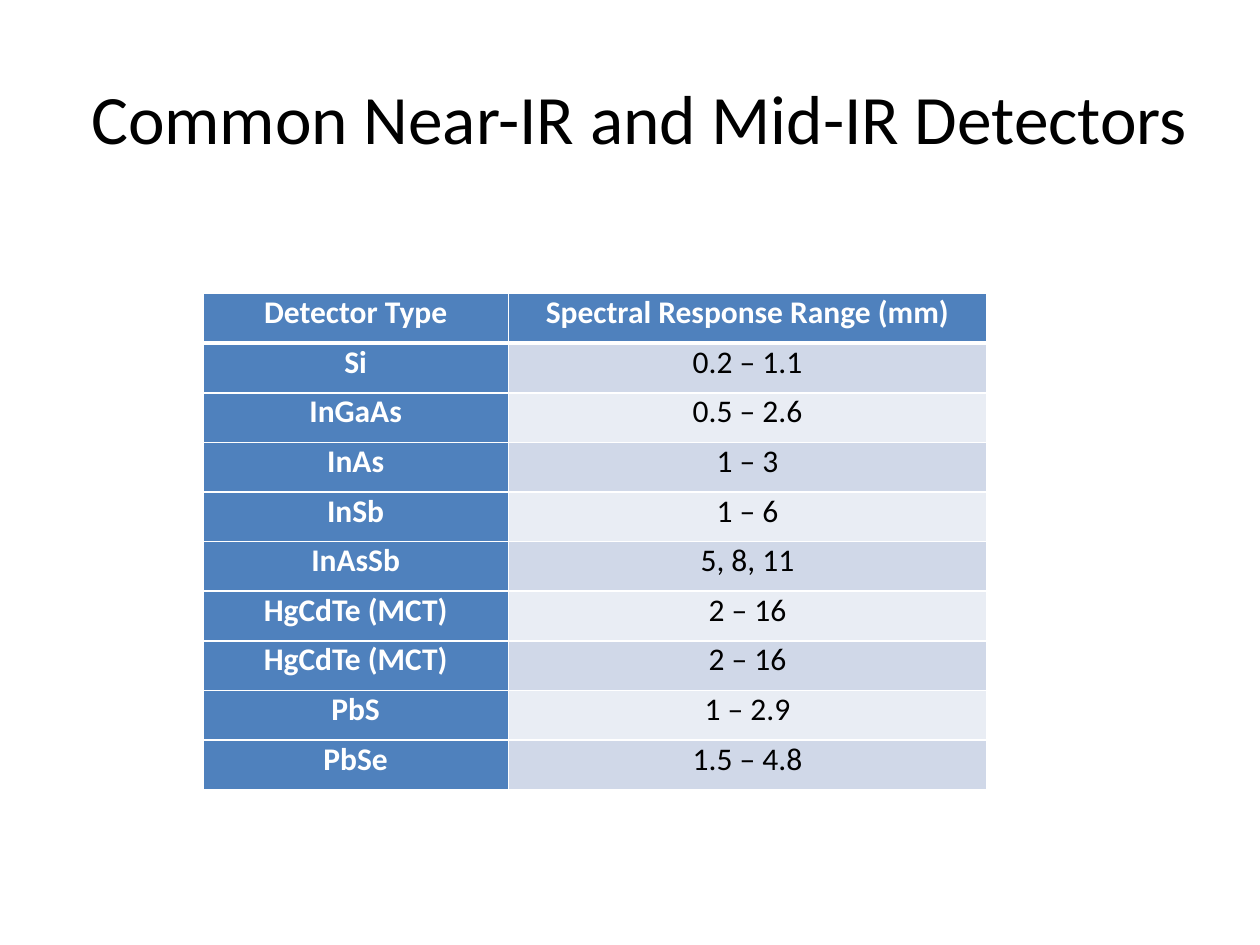
from lxml import etree
from pptx import Presentation
from pptx.dml.color import RGBColor
from pptx.enum.text import MSO_ANCHOR, PP_ALIGN
from pptx.oxml.ns import qn
from pptx.util import Inches, Pt

CENTER = PP_ALIGN.CENTER
MIDDLE = MSO_ANCHOR.MIDDLE
FONT = "Calibri"
WHITE, BLACK, BLUE = "FFFFFF", "000000", "4F81BD"
BANDS = ("D0D8E8", "E9EDF4")

HEAD = ("Detector Type", "Spectral Response Range (mm)")
ROWS = [
    ("Si", "0.2 – 1.1"),
    ("InGaAs", "0.5 – 2.6"),
    ("InAs", "1 – 3"),
    ("InSb", "1 – 6"),
    ("InAsSb", "5, 8, 11"),
    ("HgCdTe (MCT)", "2 – 16"),
    ("HgCdTe (MCT)", "2 – 16"),
    ("PbS", "1 – 2.9"),
    ("PbSe", "1.5 – 4.8"),
]
SHARES = (0.39, 0.61)  # column widths as shares of the table


def color(code):
    return RGBColor.from_string(code)


def write(frame, text, size=18, ink=BLACK, bold=False, after=0):
    par = frame.paragraphs[0]
    par.alignment = CENTER
    par.space_after = Pt(after)
    run = par.add_run()
    run.text = text
    font = run.font
    font.name, font.size, font.bold = FONT, Pt(size), bold
    font.color.rgb = color(ink)


def border(cell, side, width):
    props = cell._tc.get_or_add_tcPr()
    line = etree.SubElement(props, qn(f"a:ln{side}"), w=str(Pt(width)))
    fill = etree.SubElement(line, qn("a:solidFill"))
    etree.SubElement(fill, qn("a:srgbClr"), val=WHITE)


def add_title(slide, box, text):
    frame = slide.shapes.add_textbox(*map(Inches, box)).text_frame
    frame.word_wrap = True
    frame.vertical_anchor = MIDDLE
    write(frame, text, size=39.6)


def add_grid(slide, box, rows):
    left, top, width, height = box
    table = slide.shapes.add_table(
        len(rows), len(SHARES), *map(Inches, box)).table
    for col, share in zip(table.columns, SHARES):
        col.width = Inches(width * share)
    for r, row in enumerate(rows):
        table.rows[r].height = Inches(height / len(rows))
        for c, text in enumerate(row):
            cell = table.cell(r, c)
            cell.margin_left = cell.margin_right = Inches(0.07)
            cell.margin_top = cell.margin_bottom = 0
            # A thick rule parts the header from the body
            for side in "LRTB":
                thick = (r, side) in ((0, "B"), (1, "T"))
                border(cell, side, 3 if thick else 1)
            # The header row and first column stand out, the rest is banded
            key = r == 0 or c == 0
            cell.fill.solid()
            cell.fill.fore_color.rgb = color(BLUE if key else BANDS[(r - 1) % 2])
            write(cell.text_frame, text, ink=WHITE if key else BLACK,
                  bold=key, after=9)


def main():
    deck = Presentation()
    deck.slide_width, deck.slide_height = Inches(10), Inches(7.5)
    slide = deck.slides.add_slide(deck.slide_layouts[6])
    add_title(slide, (0.5, 0.3, 9.15, 1.25),
              "Common Near-IR and Mid-IR Detectors")
    add_grid(slide, (1.61, 2.33, 6.22, 3.94), [HEAD] + ROWS)
    deck.save("out.pptx")


if __name__ == "__main__":
    main()
